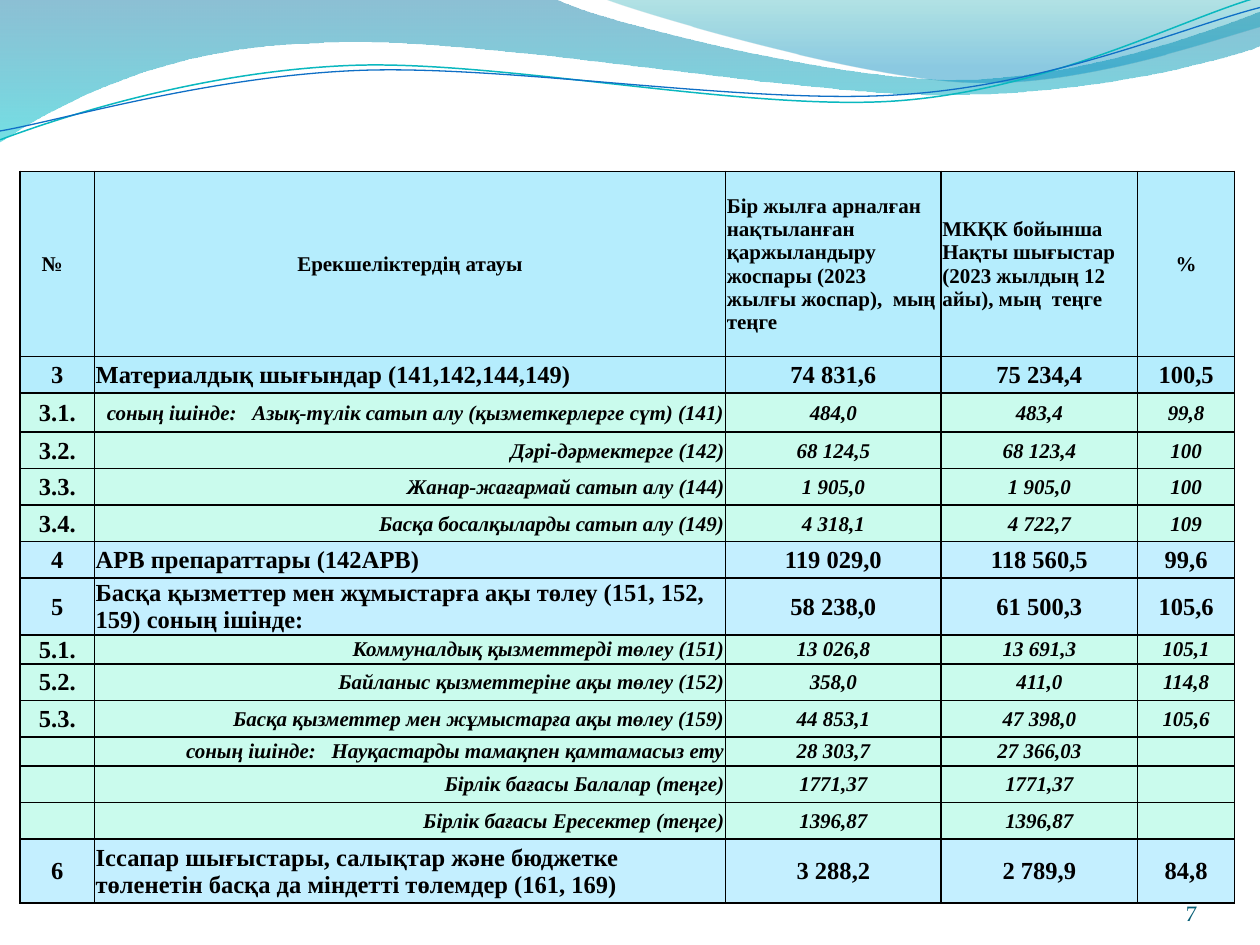
import math

import lxml.etree
import pptx
import pptx.dml.color
import pptx.enum.text
import pptx.oxml.ns
import pptx.util

Inches = pptx.util.Inches
Pt = pptx.util.Pt
ALIGN = pptx.enum.text.PP_ALIGN
ANCHOR = pptx.enum.text.MSO_ANCHOR
qn = pptx.oxml.ns.qn
add = lxml.etree.SubElement

SERIF = "Times New Roman"
HUES = {
    "head": "B5EDFD", "main": "C4EFFF", "sub": "CAFBED",
    "text": "000000", "number": "045D75",
    "deep": "0074A1", "aqua": "00C6CF", "teal": "00A1A9", "sky": "008BBF",
    "cyan": "0AB8BF", "blue": "0F6FC6",
}

# Table content: row kind, row height, cell texts
COLS = [0.59, 5.01, 1.71, 1.56, 0.77]
ROWS = [
    ("title", 1.47, "№  ", "Ерекшеліктердің атауы",
     "Бір жылға арналған нақтыланған қаржыландыру жоспары (2023 жылғы жоспар),  мың теңге",
     "МКҚК бойынша Нақты шығыстар (2023 жылдың 12 айы), мың  теңге", "%"),
    ("head", 0.29, "3", "Материалдық шығындар (141,142,144,149)",
     "74 831,6", "75 234,4", "100,5"),
    ("sub", 0.31, "3.1.", " соның ішінде:   Азық-түлік сатып алу (қызметкерлерге сүт) (141)",
     "484,0", "483,4", "99,8"),
    ("sub", 0.29, "3.2.", "Дәрі-дәрмектерге (142)", "68 124,5", "68 123,4", "100"),
    ("sub", 0.29, "3.3.", "Жанар-жағармай сатып алу (144)", "1 905,0", "1 905,0", "100"),
    ("sub", 0.29, "3.4.", "Басқа босалқыларды сатып алу (149)", "4 318,1", "4 722,7", "109"),
    ("main", 0.29, "4", "АРВ препараттары (142АРВ)", "119 029,0", "118 560,5", "99,6"),
    ("main", 0.45, "5", "Басқа қызметтер мен жұмыстарға ақы төлеу (151, 152, 159) соның ішінде:",
     "58 238,0", "61 500,3", "105,6"),
    ("sub", 0.23, "5.1.", "Коммуналдық қызметтерді төлеу (151)", "13 026,8", "13 691,3", "105,1"),
    ("sub", 0.29, "5.2.", "Байланыс қызметтеріне ақы төлеу (152)", "358,0", "411,0", "114,8"),
    ("sub", 0.29, "5.3.", "Басқа қызметтер мен жұмыстарға ақы төлеу (159)",
     "44 853,1", "47 398,0", "105,6"),
    ("sub", 0.23, "", "соның ішінде:   Науқастарды тамақпен қамтамасыз ету",
     "28 303,7", "27 366,03", ""),
    ("sub", 0.29, "", "Бірлік бағасы Балалар (теңге)", "1771,37", "1771,37", ""),
    ("sub", 0.29, "", "Бірлік бағасы Ересектер (теңге)", "1396,87", "1396,87", ""),
    ("main", 0.51, "6",
     "Іссапар шығыстары, салықтар және бюджетке төленетін басқа да міндетті төлемдер (161, 169)",
     "3 288,2", "2 789,9", "84,8"),
]

# Wave outlines: a pair is a straight step, six numbers are a Bezier step
BAND = [(0, 0), (4.4, -0.01), (4.76, 0.17, 6.64, 0.63, 7.58, 0.63),
        (8.53, 0.63, 9.58, 0.26, 10, 0.09), (10.01, 0.36),
        (9.83, 0.44, 8.7, 0.76, 7.46, 0.75), (6.22, 0.75, 3.82, 0.28, 2.57, 0.34),
        (1.29, 0.36, 0.46, 0.83, -0.01, 1.13)]
CREST = [(4.79, -0.01), (5.09, 0.11, 6.82, 0.62, 7.69, 0.65),
         (8.56, 0.69, 9.61, 0.32, 10, 0.21), (10, 0)]
UPPER = [(0, 1.11), (0.48, 0.93, 1.58, 0.57, 2.77, 0.52),
         (3.95, 0.47, 5.93, 0.89, 7.13, 0.8), (8.33, 0.71, 9.38, 0.15, 9.98, -0.02)]
LOWER = [(0, 1.04), (0.47, 0.96, 1.64, 0.61, 2.83, 0.56),
         (4.03, 0.51, 5.97, 0.84, 7.17, 0.75), (8.36, 0.67, 9.41, 0.21, 10, 0.06)]
TILT = 2.7


def color(name):
    return pptx.dml.color.RGBColor.from_string(HUES[name])


def write(frame, text, size=12, font=SERIF, hue="text", bold=True, slant=False,
          align=ALIGN.CENTER):
    frame.word_wrap = True
    para = frame.paragraphs[0]
    para.alignment = align
    if not text:
        # Keep an empty cell as low as its row
        mark = add(para._p, qn("a:endParaRPr"), sz="1000")
        add(mark, qn("a:latin"), typeface=font)
        return
    run = para.add_run()
    run.text = text
    run.font.size, run.font.name = Pt(size), font
    run.font.bold, run.font.italic = bold, slant
    run.font.color.rgb = color(hue)


def pairs(step):
    return list(zip(step[::2], step[1::2]))


def turn(steps, angle, mid):
    """Rotate all points of the steps about a centre."""
    cos, sin = math.cos(math.radians(angle)), math.sin(math.radians(angle))
    result = []
    for step in steps:
        moved = []
        for x, y in pairs(step):
            dx, dy = x - mid[0], y - mid[1]
            moved += [mid[0] + dx * cos - dy * sin, mid[1] + dx * sin + dy * cos]
        result.append(tuple(moved))
    return result


def outline(slide, steps, close):
    ends = [(Inches(s[-2]), Inches(s[-1])) for s in steps]
    pen = slide.shapes.build_freeform(*ends[0])
    pen.add_line_segments(ends[1:], close=close)
    shape = pen.convert_to_shape()
    shape.shadow.inherit = False
    # Bend the straight segments that have control points
    lines = list(shape._element.spPr.iter(qn("a:lnTo")))
    for line, step in zip(lines, steps[1:]):
        if len(step) == 6:
            bend = lxml.etree.Element(qn("a:cubicBezTo"))
            for x, y in pairs(step):
                add(bend, qn("a:pt"), x=str(Inches(x) - shape.left),
                    y=str(Inches(y) - shape.top))
            line.getparent().replace(line, bend)
    return shape


def wave(slide, steps, stops):
    shape = outline(slide, steps, True)
    shape.line.fill.background()
    shape.fill.gradient()
    shape.fill.gradient_angle = 270
    for stop, (place, hue, _) in zip(shape.fill.gradient_stops, stops):
        stop.position = place
        stop.color.rgb = color(hue)
    tones = list(shape._element.spPr.iter(qn("a:srgbClr")))
    for tone, (_, _, alpha) in zip(tones, stops):
        add(tone, qn("a:alpha"), val=str(alpha * 1000))


def curve(slide, steps, mid, hue, width):
    shape = outline(slide, turn(steps, TILT, mid), False)
    shape.rotation = 360 - TILT
    shape.fill.background()
    shape.line.color.rgb = color(hue)
    shape.line.width = Pt(width)


def border(cell):
    props = cell._tc.get_or_add_tcPr()
    for side in ("lnL", "lnR", "lnT", "lnB"):
        line = add(props, qn("a:" + side), w=str(Pt(1)))
        add(add(line, qn("a:solidFill")), qn("a:srgbClr"), val=HUES["text"])


def style(kind, col):
    """Text format of a cell by row kind and column."""
    if kind == "title":
        return {"align": ALIGN.LEFT if col in (2, 3) else ALIGN.CENTER}
    small = kind == "sub" and col > 0
    align = ALIGN.CENTER
    if col == 1:
        align = ALIGN.RIGHT if small else ALIGN.LEFT
    return {"size": 12 if small else 14, "slant": small, "align": align}


def table(slide):
    frame = slide.shapes.add_table(len(ROWS), len(COLS), Inches(0.16), Inches(1.36),
                                   Inches(9.65), Inches(5.86))
    grid = frame.table
    grid.first_row = grid.horz_banding = False
    for col, width in zip(grid.columns, COLS):
        col.width = Inches(width)
    for row, (kind, height, *texts) in zip(grid.rows, ROWS):
        row.height = Inches(height)
        for col, text in enumerate(texts):
            cell = row.cells[col]
            cell.margin_left = cell.margin_right = cell.margin_top = Inches(0.01)
            cell.margin_bottom = 0
            cell.vertical_anchor = ANCHOR.MIDDLE
            border(cell)
            cell.fill.solid()
            cell.fill.fore_color.rgb = color("head" if kind == "title" else kind)
            write(cell.text_frame, text, **style(kind, col))


def number(slide, text):
    box = slide.shapes.add_textbox(Inches(8.67), Inches(6.95), Inches(0.83), Inches(0.4))
    frame = box.text_frame
    frame.margin_left = frame.margin_right = frame.margin_top = frame.margin_bottom = 0
    frame.vertical_anchor = ANCHOR.BOTTOM
    write(frame, text, font="TeX Gyre Pagella", hue="number", bold=False, align=ALIGN.RIGHT)


def main():
    deck = pptx.Presentation()
    deck.slide_width, deck.slide_height = Inches(10), Inches(7.5)
    slide = deck.slides.add_slide(deck.slide_layouts[6])

    # Waves along the top
    wave(slide, BAND, [(0, "deep", 45), (1, "aqua", 55)])
    wave(slide, CREST, [(0, "teal", 30), (0.8, "sky", 45)])
    curve(slide, UPPER, (4.99, 0.58), "cyan", 0.85)
    curve(slide, LOWER, (5, 0.59), "blue", 0.75)

    # Spending table and slide number
    table(slide)
    number(slide, "7")
    deck.save("out.pptx")


if __name__ == "__main__":
    main()
